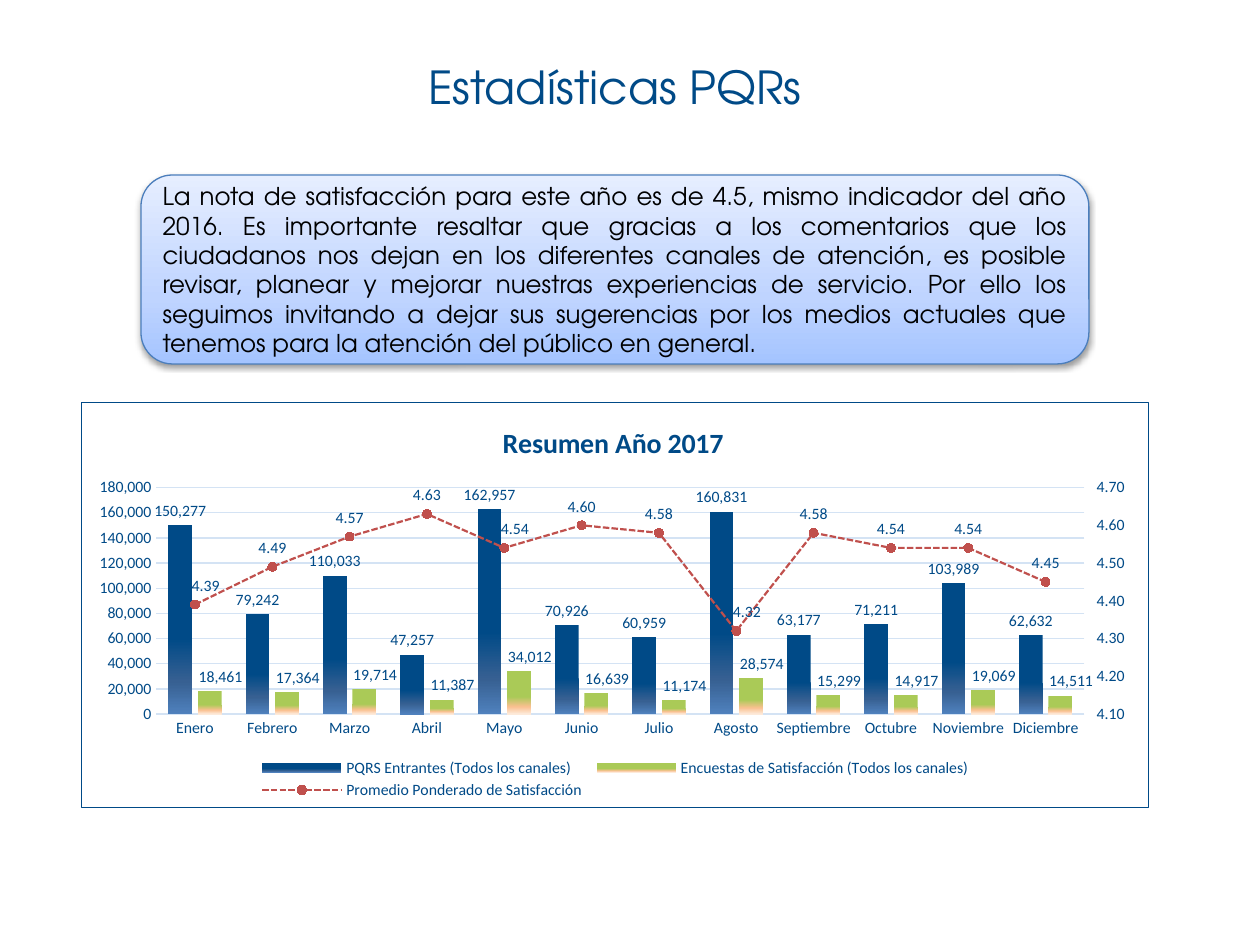
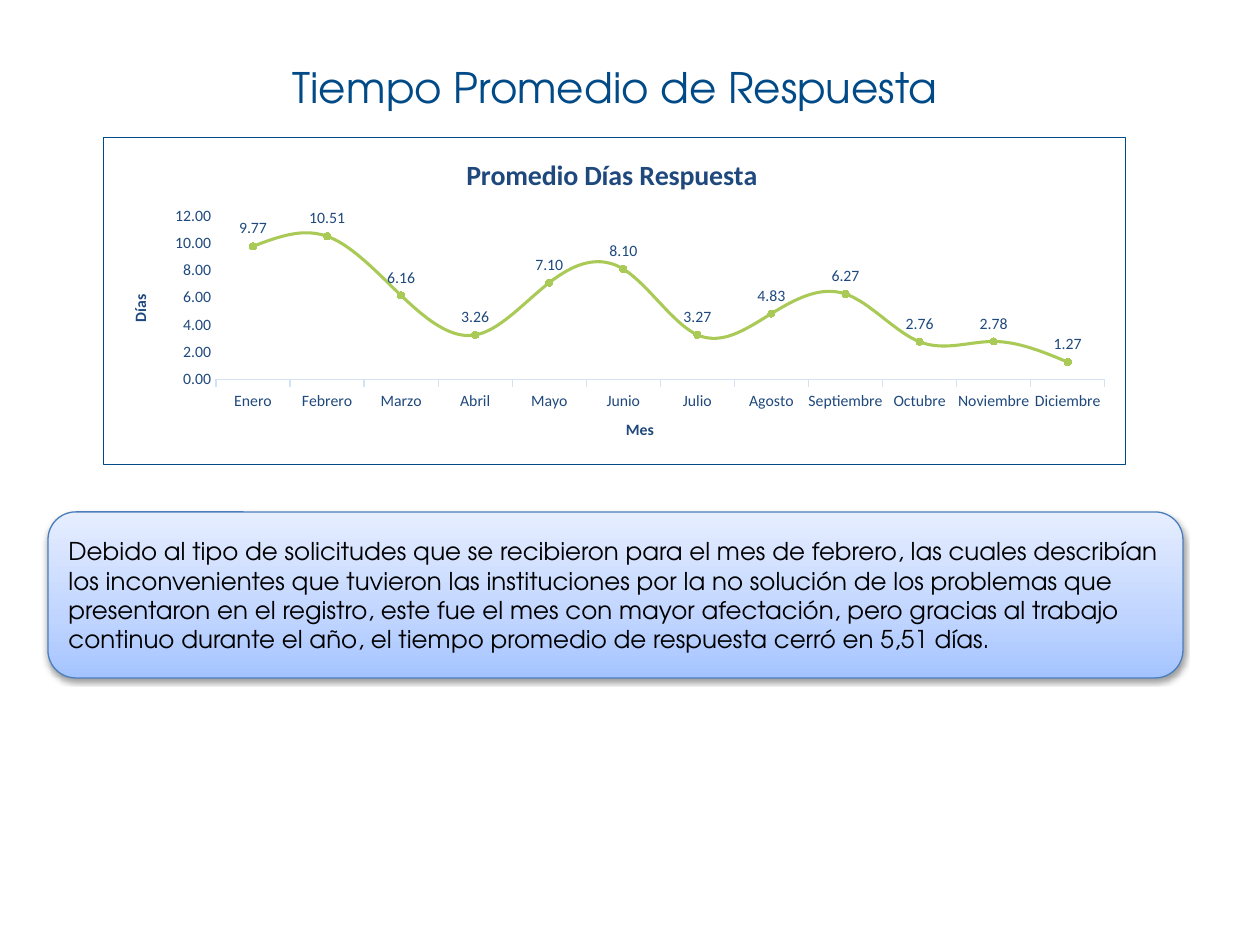
from copy import deepcopy

from pptx import Presentation
from pptx.chart.axis import CategoryAxis, ValueAxis
from pptx.chart.data import CategoryChartData
from pptx.dml.color import RGBColor
from pptx.enum.chart import (XL_CHART_TYPE, XL_LABEL_POSITION, XL_LEGEND_POSITION,
                             XL_MARKER_STYLE, XL_TICK_LABEL_POSITION, XL_TICK_MARK)
from pptx.enum.dml import MSO_LINE
from pptx.enum.shapes import MSO_SHAPE
from pptx.enum.text import MSO_ANCHOR, MSO_AUTO_SIZE, PP_ALIGN
from pptx.oxml import parse_xml
from pptx.oxml.ns import nsdecls, qn
from pptx.util import Emu, Pt

COLORS = {
    "blue": "004A87", "navy": "1F497D", "grid": "D4E3F4", "green": "AACA57",
    "red": "C0504D", "edge": "4B7EBC", "black": "000000", "white": "FFFFFF",
}
PANEL_STOPS = [(0, "A4C4FF"), (35, "BFD4FF"), (100, "E6EEFF")]
ENTRY_STOPS = [(0, "004A87"), (60, "004A87"), (83, "376092"), (100, "4F81BD")]
SURVEY_STOPS = [(0, "AACA57"), (60, "AACA57"), (83, "FAC090"), (100, "FDEADA")]

TITLE_FONT = "TeX Gyre Adventor"
CHART_FONT = "Calibri"
TITLE_BOX = (48, 37, 1134, 99)

MONTHS = ["Enero", "Febrero", "Marzo", "Abril", "Mayo", "Junio", "Julio", "Agosto",
          "Septiembre", "Octubre", "Noviembre", "Diciembre"]
SUMMARY = {
    "PQRS Entrantes (Todos los canales)":
        [150277, 79242, 110033, 47257, 162957, 70926, 60959, 160831, 63177, 71211, 103989, 62632],
    "Encuestas de Satisfacción (Todos los canales)":
        [18461, 17364, 19714, 11387, 34012, 16639, 11174, 28574, 15299, 14917, 19069, 14511],
    "Promedio Ponderado de Satisfacción":
        [4.39, 4.49, 4.57, 4.63, 4.54, 4.6, 4.58, 4.32, 4.58, 4.54, 4.54, 4.45],
}
RESPONSE_DAYS = [9.77, 10.51, 6.16, 3.26, 7.1, 8.1, 3.27, 4.83, 6.27, 2.76, 2.78, 1.27]

SATISFACTION_TEXT = (
    "La nota de satisfacción para este año es de 4.5, mismo indicador del año 2016. "
    "Es importante resaltar que gracias a los comentarios que los ciudadanos nos dejan "
    "en los diferentes canales de atención, es posible revisar, planear y mejorar nuestras "
    "experiencias de servicio. Por ello los seguimos invitando a dejar sus sugerencias por "
    "los medios actuales que tenemos para la atención del público en general.")
RESPONSE_TEXT = (
    "Debido al tipo de solicitudes que se recibieron para el mes de febrero, las cuales "
    "describían los inconvenientes que tuvieron las instituciones por la no solución de los "
    "problemas que presentaron en el registro, este fue el mes con mayor afectación, pero "
    "gracias al trabajo continuo durante el año, el tiempo promedio de respuesta cerró en "
    "5,51 días.")


def px(n):
    return Emu(round(n * 914400 / 126))


def rgb(name):
    return RGBColor.from_string(COLORS[name])


def set_attrs(obj, **values):
    for name, value in values.items():
        setattr(obj, name, value)


def set_font(font, size, color, name=CHART_FONT, bold=False):
    set_attrs(font, size=Pt(size), name=name, bold=bold)
    font.color.rgb = rgb(color)


def set_line(line, color, width=0.75):
    line.color.rgb = rgb(color)
    line.width = Pt(width)


def set_gradient(fill, element, stops, angle):
    """Fill with any number of (percent, hex) stops; the angle is counter-clockwise."""
    fill.gradient()
    fill.gradient_angle = angle
    gs_list = next(element.iter(qn("a:gsLst")))
    for gs in list(gs_list):
        gs_list.remove(gs)
    for pos, color in stops:
        gs_list.append(parse_xml(
            f'<a:gs {nsdecls("a")} pos="{pos * 1000}"><a:srgbClr val="{color}"/></a:gs>'))


def set_layout(element, index, inner=False, mode="edge", **fractions):
    """Place a chart part by fractions of the chart's width and height."""
    for old in element.findall(qn("c:layout")):
        element.remove(old)
    target = '<c:layoutTarget val="inner"/>' if inner else ""
    modes = "".join(f'<c:{k}Mode val="{mode}"/>' for k in fractions if k in "xy")
    values = "".join(f'<c:{k} val="{v}"/>' for k, v in fractions.items())
    element.insert(index, parse_xml(
        f'<c:layout {nsdecls("c")}><c:manualLayout>{target}{modes}{values}'
        '</c:manualLayout></c:layout>'))


def add_title_slide(prs, title, size):
    s = prs.slides.add_slide(prs.slide_layouts[5])
    sp = s.shapes.title
    set_attrs(sp, **dict(zip(("left", "top", "width", "height"), map(px, TITLE_BOX))))
    tf = sp.text_frame
    set_attrs(tf, text=title, auto_size=MSO_AUTO_SIZE.NONE, vertical_anchor=MSO_ANCHOR.MIDDLE)
    p = tf.paragraphs[0]
    p.alignment = PP_ALIGN.CENTER
    set_font(p.runs[0].font, size, "blue", TITLE_FONT)
    return s


def add_panel(s, box, text, align):
    sp = s.shapes.add_shape(MSO_SHAPE.ROUNDED_RECTANGLE, *map(px, box))
    set_gradient(sp.fill, sp._element, PANEL_STOPS, 90)
    set_line(sp.line, "edge")
    sp.shadow.inherit = False
    sp._element.spPr.find(qn("a:effectLst")).append(parse_xml(
        f'<a:outerShdw {nsdecls("a")} blurRad="40000" dist="20000" dir="5400000" '
        'rotWithShape="0"><a:srgbClr val="000000"><a:alpha val="38000"/></a:srgbClr>'
        '</a:outerShdw>'))
    tf = sp.text_frame
    set_attrs(tf, text=text, word_wrap=True, vertical_anchor=MSO_ANCHOR.MIDDLE)
    p = tf.paragraphs[0]
    p.alignment = align
    set_font(p.runs[0].font, 14, "black", TITLE_FONT)


def set_title(part, text, size, color):
    """Give a chart or an axis its bold title."""
    part.has_title = True
    tf = part.chart_title.text_frame if hasattr(part, "chart_title") else part.axis_title.text_frame
    tf.text = text
    set_font(tf.paragraphs[0].runs[0].font, size, color, bold=True)


def add_framed_chart(s, kind, box, series, title, color, title_at, plot_at):
    data = CategoryChartData()
    data.categories = MONTHS
    for name, values in series.items():
        data.add_series(name, values)
    chart = s.shapes.add_chart(kind, *map(px, box), data).chart
    set_font(chart.font, 10, color)
    chart_space = chart._chartSpace
    chart_space.find(qn("c:txPr")).addprevious(parse_xml(
        f'<c:spPr {nsdecls("c", "a")}><a:solidFill><a:srgbClr val="{COLORS["white"]}"/>'
        f'</a:solidFill><a:ln w="9525"><a:solidFill><a:srgbClr val="{COLORS["blue"]}"/>'
        '</a:solidFill></a:ln></c:spPr>'))
    chart.has_legend = False
    set_title(chart, title, 16, color)
    set_layout(chart.chart_title._element, 1, **title_at)
    set_layout(chart_space.chart.plotArea, 0, inner=True, **plot_at)
    for axis in (chart.category_axis, chart.value_axis):
        set_font(axis.tick_labels.font, 9, color)
        axis.major_tick_mark = XL_TICK_MARK.NONE
    set_line(chart.category_axis.format.line, "grid")
    chart.value_axis.format.line.fill.background()
    return chart


def set_scale(axis, low, high, step, number_format):
    set_attrs(axis, minimum_scale=low, maximum_scale=high, major_unit=step)
    set_attrs(axis.tick_labels, number_format=number_format, number_format_is_linked=False)


def add_labels(series, number_format, color, position):
    labels = series.data_labels
    set_attrs(labels, show_value=True, number_format=number_format,
              number_format_is_linked=False, position=position)
    set_font(labels.font, 9, color)


def nudge_labels(series, indexes, color, position):
    """Shift single labels a little to the right, clear of the dark columns."""
    for i in indexes:
        label = series.points[i].data_label
        set_font(label.font, 9, color)
        label.position = position
    labels = series._element.find(qn("c:dLbls"))
    for label in labels.findall(qn("c:dLbl")):
        set_layout(label, 1, mode="factor", x=0.01, y=0)
        label.insert(2, deepcopy(labels.find(qn("c:numFmt"))))


def style_line(series, color, width, marker_size, label_color, smooth):
    set_line(series.format.line, color, width)
    series.smooth = smooth
    marker = series.marker
    set_attrs(marker, style=XL_MARKER_STYLE.CIRCLE, size=marker_size)
    marker.format.fill.solid()
    marker.format.fill.fore_color.rgb = rgb(color)
    set_line(marker.format.line, color)
    add_labels(series, "#,##0.00", label_color, XL_LABEL_POSITION.ABOVE)


def move_last_series_to_right_axis(chart):
    """Turn the last column series into a line on its own axes; return it and the value axis."""
    bars = chart.plots[0]._element
    ser = bars.findall(qn("c:ser"))[-1]
    for flag in ser.findall(qn("c:invertIfNegative")):
        ser.remove(flag)
    lines = parse_xml(
        f'<c:lineChart {nsdecls("c")}><c:grouping val="stacked"/><c:varyColors val="0"/>'
        '<c:marker val="1"/><c:axId val="5001"/><c:axId val="5002"/></c:lineChart>')
    lines.insert(2, ser)
    bars.addnext(lines)

    cat, val = chart.category_axis._element, chart.value_axis._element
    right, hidden = deepcopy(val), deepcopy(cat)
    for axis, own, other in ((hidden, "5001", "5002"), (right, "5002", "5001")):
        axis.find(qn("c:axId")).set("val", own)
        axis.find(qn("c:crossAx")).set("val", other)
    right.find(qn("c:axPos")).set("val", "r")
    right.find(qn("c:crosses")).set("val", "max")
    val.addnext(right)
    right.addnext(hidden)
    CategoryAxis(hidden).visible = False
    right_axis = ValueAxis(right)
    set_attrs(right_axis, has_major_gridlines=False, major_tick_mark=XL_TICK_MARK.OUTSIDE,
              tick_label_position=XL_TICK_LABEL_POSITION.HIGH)
    return chart.plots[1].series[0], right_axis


def add_summary_chart(s, box):
    chart = add_framed_chart(
        s, XL_CHART_TYPE.COLUMN_CLUSTERED, box, SUMMARY, "Resumen Año 2017", "blue",
        dict(x=0.39, y=0.04), dict(x=0.07, y=0.21, w=0.87, h=0.56))
    left_axis = chart.value_axis
    set_scale(left_axis, 0, 180000, 20000, "#,##0")
    set_line(left_axis.major_gridlines.format.line, "grid")
    average, right_axis = move_last_series_to_right_axis(chart)
    set_scale(right_axis, 4.1, 4.7, 0.1, "0.00")

    bars = chart.plots[0]
    set_attrs(bars, gap_width=100, overlap=-24, vary_by_categories=False)
    for series, stops in zip(bars.series, (ENTRY_STOPS, SURVEY_STOPS)):
        set_gradient(series.format.fill, series._element, stops, 270)
        add_labels(series, "#,##0", "blue", XL_LABEL_POSITION.OUTSIDE_END)
    nudge_labels(bars.series[1], range(len(MONTHS)), "blue", XL_LABEL_POSITION.OUTSIDE_END)
    style_line(average, "red", 1.25, 5, "blue", False)
    average.format.line.dash_style = MSO_LINE.SQUARE_DOT
    nudge_labels(average, (0, 4, 7), "blue", XL_LABEL_POSITION.ABOVE)

    chart.has_legend = True
    set_attrs(chart.legend, position=XL_LEGEND_POSITION.BOTTOM, include_in_layout=False)
    set_font(chart.legend.font, 9, "blue")
    set_layout(chart.legend._element, 1, x=0.16, y=0.87, w=0.68, h=0.12)


def add_response_chart(s, box):
    title = "Promedio Días Respuesta"
    chart = add_framed_chart(
        s, XL_CHART_TYPE.LINE_MARKERS, box, {title: RESPONSE_DAYS}, title, "navy",
        dict(x=0.35, y=0.04), dict(x=0.11, y=0.24, w=0.87, h=0.5))
    chart.category_axis.major_tick_mark = XL_TICK_MARK.OUTSIDE
    chart.value_axis.has_major_gridlines = False
    set_scale(chart.value_axis, 0, 12, 2, "#,##0.00")
    set_title(chart.category_axis, "Mes", 9, "navy")
    set_title(chart.value_axis, "Días", 9, "navy")
    chart.plots[0].vary_by_categories = False
    style_line(chart.plots[0].series[0], "green", 1.75, 4, "navy", True)


def main():
    prs = Presentation()
    set_attrs(prs, slide_width=px(1260), slide_height=px(945))

    s = add_title_slide(prs, "Estadísticas PQRs", 26)
    add_panel(s, (141, 175, 948, 189), SATISFACTION_TEXT, PP_ALIGN.JUSTIFY)
    add_summary_chart(s, (81, 402, 1068, 406))

    s = add_title_slide(prs, "Tiempo Promedio de Respuesta", 24)
    add_panel(s, (48, 512, 1135, 166), RESPONSE_TEXT, PP_ALIGN.LEFT)
    add_response_chart(s, (103, 137, 1023, 328))

    prs.save("out.pptx")


if __name__ == "__main__":
    main()
